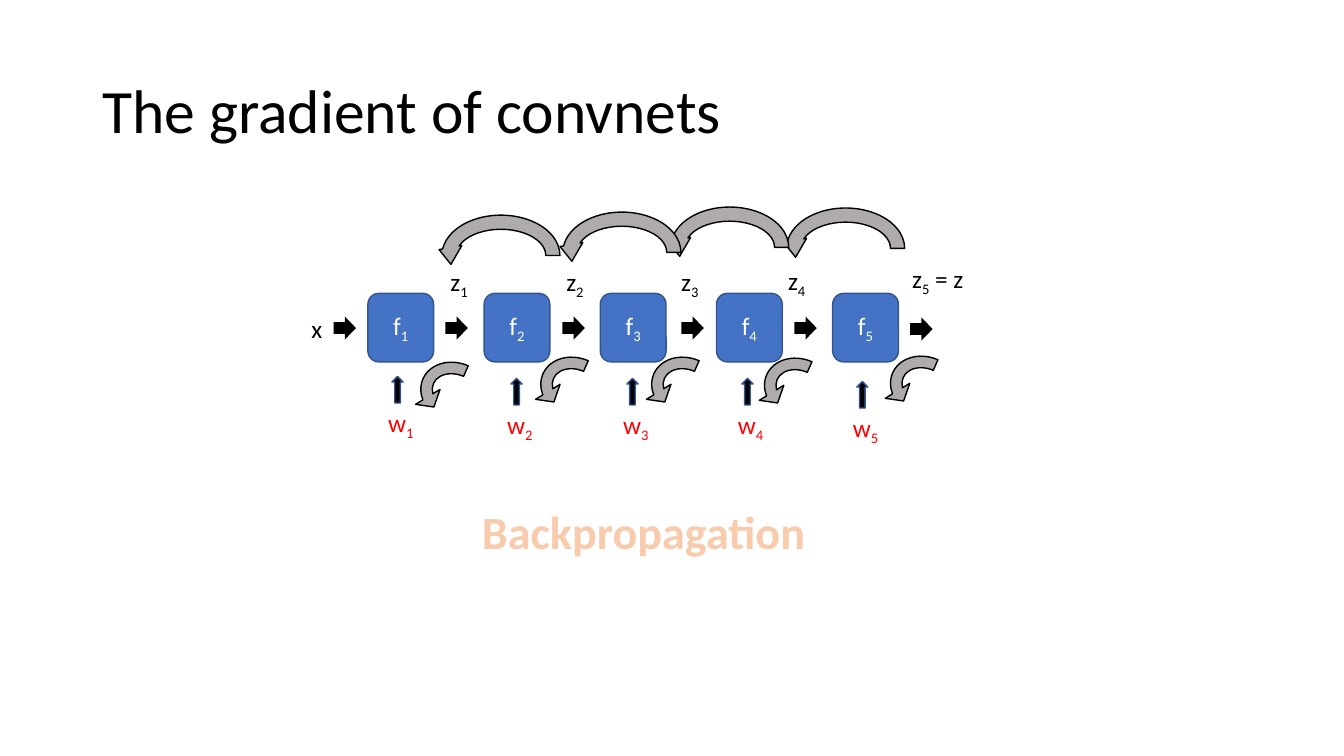
import pptx
import pptx.util
import pptx.dml.color
import pptx.enum.shapes
import pptx.enum.text
import pptx.oxml
from pptx.oxml.ns import nsdecls

Pt = pptx.util.Pt
MSO = pptx.enum.shapes.MSO_SHAPE
ALIGN = pptx.enum.text.PP_ALIGN
ANCHOR = pptx.enum.text.MSO_ANCHOR

COLORS = {"black": "000000", "white": "FFFFFF", "box": "4472C4", "box_line": "325491",
          "weight": "FF0000", "back": "AFABAB", "peach": "F8CBAD", "orange": "ED7D31"}
PITCH, BOX_W, BOX_H = 83, 47, 49
FORWARD_ARC = [0.158, 11.423, 210.669, 108, 0.129]
WEIGHT_ARC = [0.149, 14.778, 180.319, 108, 0.185]

# Offsets from each layer's box: output arrow, z label, w label, arc to w, arc to the previous z
LAYERS = [
    {"out": (55.4, 16.6), "z": (51.8, -23), "w": (5, 77.8), "w_arc": (35.3, 39.6), "z_arc": (49.7, -59)},
    {"out": (56, 16.6), "z": (51.6, -23), "w": (7, 79.2), "w_arc": (38, 36), "z_arc": (53.1, -61.2)},
    {"out": (58, 16.6), "z": (50.7, -23), "w": (6.8, 79.2), "w_arc": (34.2, 36), "z_arc": (47.1, -64.8)},
    {"out": (55.6, 16.6), "z": (44, -23.7), "w": (5.9, 79.2), "w_arc": (31.8, 36.7), "z_arc": (46.9, -64.1)},
    {"out": (55.4, 17.3), "z": (49.6, -25.2), "w": (5, 81.4), "w_arc": (38.8, 35.3)},
]


def rgb(name):
    return pptx.dml.color.RGBColor.from_string(COLORS[name])


def write(sp, parts, color, size=18, align=ALIGN.LEFT):
    """Fill the shape with one paragraph; the second part is a subscript."""
    tf = sp.text_frame
    tf.word_wrap = True
    p = tf.paragraphs[0]
    p.alignment = align
    for i, part in enumerate(parts):
        r = p.add_run()
        r.text = part
        r.font.name = "Calibri"
        r.font.size = Pt(size)
        r.font.color.rgb = rgb(color)
        if i == 1:
            r.font._element.set("baseline", "-25000")
    return p


def add_text(s, x, y, w, h, parts, color="black", size=18, align=ALIGN.LEFT):
    sp = s.shapes.add_textbox(Pt(x), Pt(y), Pt(w), Pt(h))
    return sp, write(sp, parts, color, size, align)


def add_shape(s, kind, x, y, w, h, fill, line=None):
    sp = s.shapes.add_shape(kind, Pt(x), Pt(y), Pt(w), Pt(h))
    sp.shadow.inherit = False
    sp.fill.solid()
    sp.fill.fore_color.rgb = rgb(fill)
    if line:
        sp.line.color.rgb = rgb(line)
        sp.line.width = Pt(1)
    else:
        sp.line.fill.background()
    return sp


def add_arc(s, x, y, w, h, adjustments, rotation=0):
    """Circular arrow mirrored so that it points back to the left."""
    sp = add_shape(s, MSO.CIRCULAR_ARROW, x, y, w, h, "back", "black")
    for i, value in enumerate(adjustments):
        sp.adjustments[i] = value
    sp.rotation = rotation
    sp._element.spPr.get_or_add_xfrm().set("flipH", "1")


def add_step_arrow(s, x, y):
    add_shape(s, MSO.RIGHT_ARROW, x, y, 16, 16.5, "black")


def add_layer(s, x, y, number, offsets, last):
    at = {name: (x + dx, y + dy) for name, (dx, dy) in offsets.items()}
    box = add_shape(s, MSO.ROUNDED_RECTANGLE, x, y, BOX_W, BOX_H, "box", "box_line")
    box.text_frame.vertical_anchor = ANCHOR.MIDDLE
    write(box, ["f", number], "white", align=ALIGN.CENTER)
    add_step_arrow(s, *at["out"])
    wx, wy = at["w"]
    add_text(s, wx, wy, 37, 29, ["w", number], "weight", align=ALIGN.CENTER)
    add_shape(s, MSO.UP_ARROW, wx + 12.2, wy - 18.4, 8, 19, "black", "box_line")
    if last:
        add_text(s, *at["z"], 57, 29, ["z", number, " = z"])
    else:
        add_text(s, *at["z"], 29, 29, ["z", number])
        add_arc(s, *at["z_arc"], 90.7, 64, FORWARD_ARC)
    add_arc(s, *at["w_arc"], 55.4, 64, WEIGHT_ARC, 293.7)


def add_network(s, x, y):
    add_text(s, x, y + 10.8, 23, 29, ["x"])
    add_step_arrow(s, x + 23, y + 16.6)
    for i, offsets in reversed(list(enumerate(LAYERS))):
        add_layer(s, x + 47.5 + i * PITCH, y, str(i + 1), offsets, i == len(LAYERS) - 1)


def add_title(s, x, y, w, h):
    sp, p = add_text(s, x, y, w, h, ["The gradient of convnets"], size=44)
    sp.text_frame.vertical_anchor = ANCHOR.MIDDLE
    p.line_spacing = 0.9


def add_caption(s, x, y, w, h):
    sp, p = add_text(s, x, y, w, h, ["Backpropagation"], "peach", 33, ALIGN.CENTER)
    font = p.runs[0].font
    font.bold = True
    font._element.insert(0, pptx.oxml.parse_xml(
        f'<a:ln {nsdecls("a")} w="{Pt(1.75)}"><a:solidFill>'
        f'<a:srgbClr val="{COLORS["orange"]}"/></a:solidFill></a:ln>'))


def main():
    prs = pptx.Presentation()
    prs.slide_width, prs.slide_height = Pt(960), Pt(540)
    s = prs.slides.add_slide(prs.slide_layouts[6])
    add_title(s, 66, 28.8, 828, 104.4)
    add_network(s, 215.3, 209.5)
    add_caption(s, 229, 355.7, 461.5, 47.5)
    prs.save("out.pptx")


if __name__ == "__main__":
    main()
